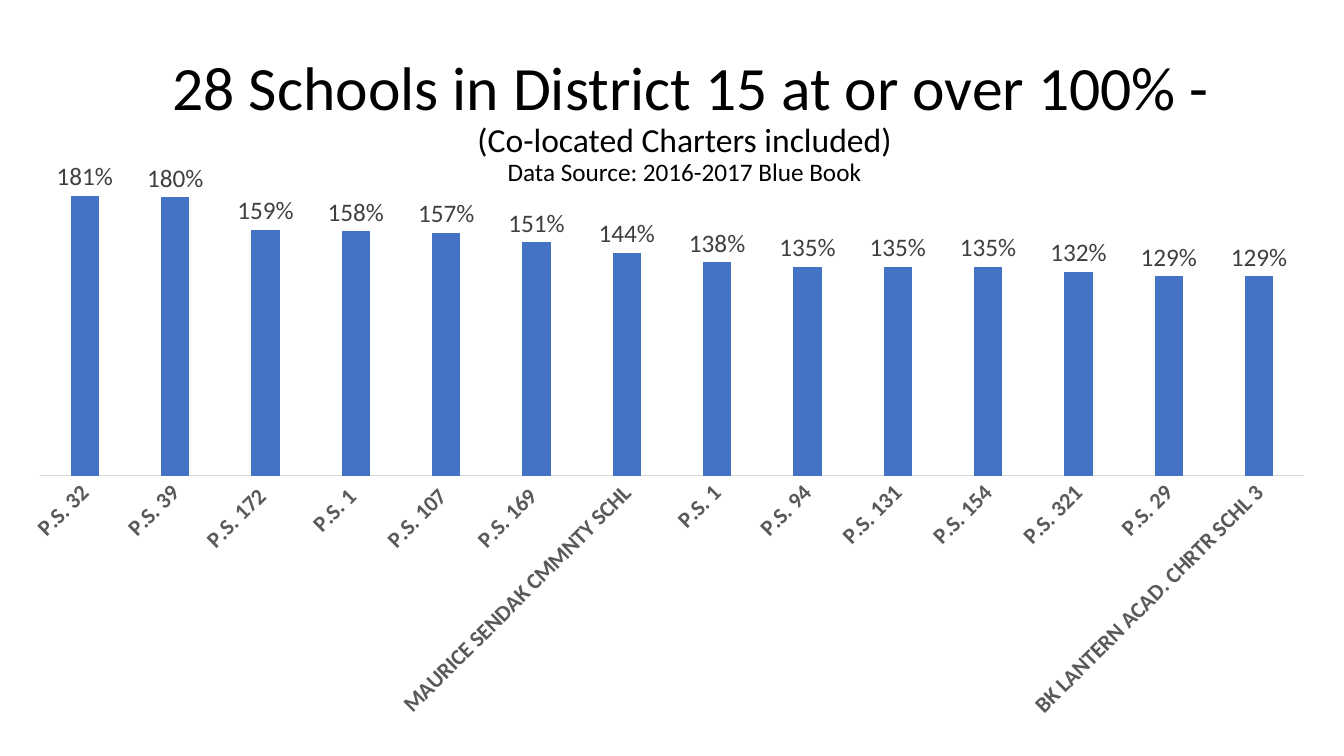
from typing import NamedTuple

from lxml import etree
from pptx import Presentation
from pptx.chart.chart import Chart
from pptx.chart.data import CategoryChartData
from pptx.dml.color import RGBColor
from pptx.enum.chart import XL_CHART_TYPE as ChartType
from pptx.enum.chart import XL_LABEL_POSITION as LabelPosition
from pptx.enum.chart import XL_TICK_LABEL_POSITION as TickLabelPosition
from pptx.enum.chart import XL_TICK_MARK as TickMark
from pptx.enum.text import MSO_ANCHOR as Anchor
from pptx.enum.text import MSO_AUTO_SIZE as AutoSize
from pptx.enum.text import PP_ALIGN as Align
from pptx.oxml.ns import qn
from pptx.slide import Slide
from pptx.text.text import Font, _Paragraph as Paragraph
from pptx.util import Inches, Pt

FONT = "Calibri"
BLACK, BAR_BLUE = "000000", "4472C4"
LABEL_GREY, AXIS_GREY, LINE_GREY = "404040", "595959", "D9D9D9"


class TitleLine(NamedTuple):
    text: str
    size: int


class School(NamedTuple):
    name: str
    utilization: float


TITLE_LINES = [
    TitleLine(" 28 Schools in District 15 at or over 100% -", 44),
    TitleLine("(Co-located Charters included)", 24),
    TitleLine("Data Source: 2016-2017 Blue Book", 18),
]

SCHOOLS = [
    School("P.S. 32", 1.81),
    School("P.S. 39", 1.80),
    School("P.S. 172 ", 1.59),
    School("P.S. 1 ", 1.58),
    School("P.S. 107 ", 1.57),
    School("P.S. 169 ", 1.51),
    School("MAURICE SENDAK CMMNTY SCHL", 1.44),
    School("P.S. 1", 1.38),
    School("P.S. 94", 1.35),
    School("P.S. 131", 1.35),
    School("P.S. 154", 1.35),
    School("P.S. 321", 1.32),
    School("P.S. 29", 1.29),
    School("BK LANTERN ACAD. CHRTR SCHL 3", 1.29),
]


def color(value: str) -> RGBColor:
    return RGBColor.from_string(value)


def format_font(font: Font, *, size: float, fill: str = BLACK, bold: bool = False) -> None:
    font.name = FONT
    font.size = Pt(size)
    font.bold = bold
    font.color.rgb = color(fill)


def add_text(paragraph: Paragraph, text: str, *, size: float, fill: str = BLACK) -> None:
    run = paragraph.add_run()
    run.text = text
    format_font(run.font, size=size, fill=fill)


def add_title(slide: Slide) -> None:
    title = slide.shapes.title
    title.left, title.top = Inches(1.04), Inches(0.51)
    title.width, title.height = Inches(11.5), Inches(1.41)
    frame = title.text_frame
    frame.word_wrap = True
    frame.auto_size = AutoSize.NONE
    frame.vertical_anchor = Anchor.MIDDLE
    paragraph = frame.paragraphs[0]
    paragraph.alignment = Align.CENTER
    paragraph.line_spacing = 0.9
    for index, line in enumerate(TITLE_LINES):
        if index:
            paragraph.add_line_break()
        add_text(paragraph, line.text, size=line.size)


def set_plot_layout(chart: Chart, x: float, y: float, width: float, height: float) -> None:
    plot_area = chart.element.chart.plotArea
    for existing in plot_area.findall(qn("c:layout")):
        plot_area.remove(existing)
    layout = etree.Element(qn("c:layout"))
    manual = etree.SubElement(layout, qn("c:manualLayout"))
    settings = {"layoutTarget": "inner", "xMode": "edge", "yMode": "edge",
                "x": x, "y": y, "w": width, "h": height}
    for name, value in settings.items():
        etree.SubElement(manual, qn(f"c:{name}")).set("val", str(value))
    plot_area.insert(0, layout)


def add_utilization_chart(slide: Slide) -> None:
    data = CategoryChartData(number_format="0%")
    data.categories = [school.name for school in SCHOOLS]
    data.add_series("Series 1", [school.utilization for school in SCHOOLS])
    chart = slide.shapes.add_chart(
        ChartType.COLUMN_CLUSTERED,
        Inches(0.24), Inches(1.49), Inches(12.85), Inches(5.81), data,
    ).chart
    chart.has_title = False
    chart.has_legend = False
    format_font(chart.font, size=10)
    set_plot_layout(chart, 0.012, 0.028, 0.976, 0.528)

    # Columns and their labels
    plot = chart.plots[0]
    plot.gap_width, plot.overlap = 219, -27
    plot.vary_by_categories = False
    series = plot.series[0]
    series.format.fill.solid()
    series.format.fill.fore_color.rgb = color(BAR_BLUE)
    labels = series.data_labels
    labels.show_value = True
    labels.position = LabelPosition.OUTSIDE_END
    labels.number_format, labels.number_format_is_linked = "0%", False
    format_font(labels.font, size=18, fill=LABEL_GREY)

    # Category axis with slanted school names
    schools_axis = chart.category_axis
    schools_axis.major_tick_mark = schools_axis.minor_tick_mark = TickMark.NONE
    schools_axis.tick_label_position = TickLabelPosition.NEXT_TO_AXIS
    schools_axis.format.line.color.rgb = color(LINE_GREY)
    schools_axis.format.line.width = Pt(0.75)
    format_font(schools_axis.tick_labels.font, size=16, fill=AXIS_GREY, bold=True)
    text_body = schools_axis._element.find(qn("c:txPr")).find(qn("a:bodyPr"))
    text_body.set("rot", str(-45 * 60000))
    text_body.set("vert", "horz")

    # Hidden value axis
    value_axis = chart.value_axis
    value_axis.minimum_scale, value_axis.maximum_scale = 0, 2
    value_axis.has_major_gridlines = False
    value_axis.major_tick_mark = value_axis.minor_tick_mark = TickMark.NONE
    value_axis.tick_labels.number_format = "0%"
    value_axis.tick_labels.number_format_is_linked = False
    value_axis.visible = False


def main() -> None:
    presentation = Presentation()
    presentation.slide_width, presentation.slide_height = Inches(13.33), Inches(7.5)
    slide = presentation.slides.add_slide(presentation.slide_layouts.get_by_name("Title Only"))
    add_title(slide)
    add_utilization_chart(slide)
    presentation.save("out.pptx")


if __name__ == "__main__":
    main()
